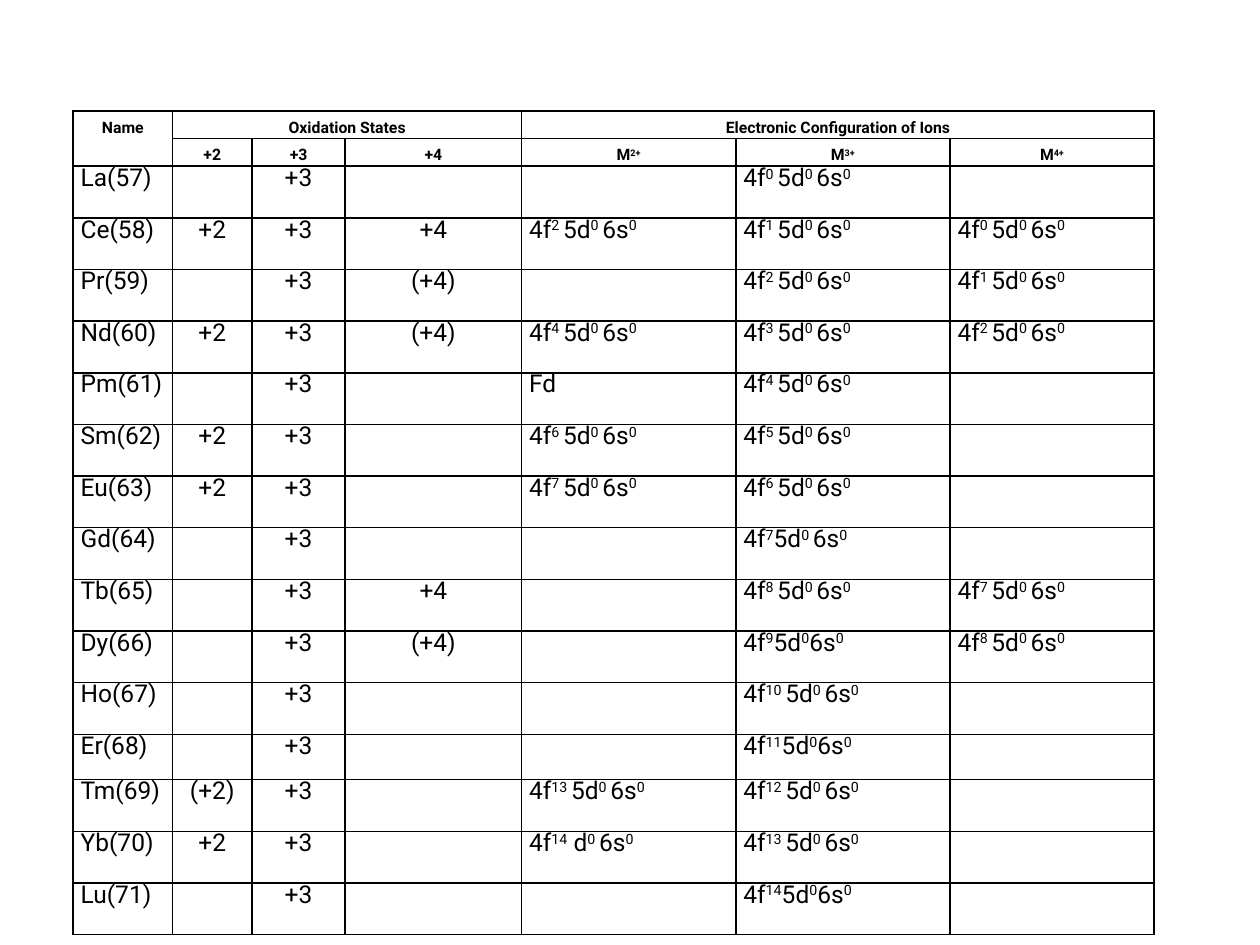
from dataclasses import dataclass

from lxml import etree
from pptx import Presentation
from pptx.dml.color import RGBColor
from pptx.enum.text import PP_ALIGN
from pptx.oxml.ns import qn
from pptx.util import Pt

CENTER, JUSTIFY = PP_ALIGN.CENTER, PP_ALIGN.JUSTIFY
PX = 9144


@dataclass(frozen=True)
class Theme:
    """Colours, font and type sizes in points."""
    ink: str = "000000"
    font: str = "Roboto"
    head: int = 9
    body: int = 14
    lead: int = 15
    gap: int = 2
    rule: int = 1


THEME = Theme()
COLS = [79, 63, 74, 140, 170, 170, 162]
ROWS = [22] * 2 + [41] * 11 + [36] + [41] * 3
SPANS = [(0, 0, 1, 0), (0, 1, 0, 3), (0, 4, 0, 6)]
CENTRED = (1, 2, 3)
HEADS = [
    ["Name", "Oxidation States", "", "", "Electronic Configuration of Ions", "", ""],
    ["", "+2", "+3", "+4", "M^2+", "M^3+", "M^4+"],
]


def ion(count):
    """Return a configuration in which each caret toggles superscript."""
    return f"4f^{count} ^5d^0 ^6s^0"


IONS = [
    ["La(57)", "", "+3", "", "", ion(0), ""],
    ["Ce(58)", "+2", "+3", "+4", ion(2), ion(1), ion(0)],
    ["Pr(59)", "", "+3", "(+4)", "", ion(2), ion(1)],
    ["Nd(60)", "+2", "+3", "(+4)", ion(4), ion(3), ion(2)],
    ["Pm(61)", "", "+3", "", "Fd", ion(4), ""],
    ["Sm(62)", "+2", "+3", "", ion(6), ion(5), ""],
    ["Eu(63)", "+2", "+3", "", ion(7), ion(6), ""],
    ["Gd(64)", "", "+3", "", "", "4f^7^5d^0 ^6s^0", ""],
    ["Tb(65)", "", "+3", "+4", "", ion(8), ion(7)],
    ["Dy(66)", "", "+3", "(+4)", "", "4f^9^5d^0^6s^0", ion(8)],
    ["Ho(67)", "", "+3", "", "", ion(10), ""],
    ["Er(68)", "", "+3", "", "", "4f^11^5d^0^6s^0", ""],
    ["Tm(69)", "(+2)", "+3", "", ion(13), ion(12), ""],
    ["Yb(70)", "+2", "+3", "", "4f^14^ d^0 ^6s^0", ion(13), ""],
    ["Lu(71)", "", "+3", "", "", "4f^14^5d^0^6s^0", ""],
]


def frame(cell):
    """Rule all four sides of a cell and clear its fill."""
    props = cell._tc.get_or_add_tcPr()
    for side in ("lnL", "lnR", "lnT", "lnB"):
        line = etree.SubElement(props, qn(f"a:{side}"), w=str(Pt(THEME.rule)))
        fill = etree.SubElement(line, qn("a:solidFill"))
        etree.SubElement(fill, qn("a:srgbClr"), val=THEME.ink)
    cell.fill.background()


def write(cell, text, head, align):
    """Set the text of a cell, raising every second part between carets."""
    cell.margin_left = cell.margin_right = 6 * PX
    cell.margin_top = cell.margin_bottom = 0
    para = cell.text_frame.paragraphs[0]
    para.alignment = align
    para.line_spacing = Pt(THEME.lead)
    para.space_before = para.space_after = Pt(THEME.gap)
    font = para.font
    font.name, font.bold = THEME.font, head
    font.size = Pt(THEME.head if head else THEME.body)
    font.color.rgb = RGBColor.from_string(THEME.ink)
    for turn, part in enumerate(text.split("^") if text else []):
        run = para.add_run()
        run.text = part
        if turn % 2:
            run._r.get_or_add_rPr().set("baseline", "30000")


def grid(slide, left, top):
    """Place the table of lanthanide ions with its corner at left, top."""
    data = HEADS + IONS
    box = (left, top, sum(COLS), sum(ROWS))
    shape = slide.shapes.add_table(len(ROWS), len(COLS), *(n * PX for n in box))
    table = shape.table
    table.first_row = table.horz_banding = False
    for col, wide in zip(table.columns, COLS):
        col.width = wide * PX
    for row, high in zip(table.rows, ROWS):
        row.height = high * PX
    for r, line in enumerate(data):
        head = r < len(HEADS)
        for c, text in enumerate(line):
            cell = table.cell(r, c)
            write(cell, text, head, CENTER if head or c in CENTRED else JUSTIFY)
            frame(cell)
    for r, c, last, end in SPANS:
        table.cell(r, c).merge(table.cell(last, end))


def main():
    """Build the slide and save it."""
    deck = Presentation()
    deck.slide_width, deck.slide_height = 1000 * PX, 750 * PX
    slide = deck.slides.add_slide(deck.slide_layouts[6])
    grid(slide, 58, 88)
    deck.save("out.pptx")


if __name__ == "__main__":
    main()
